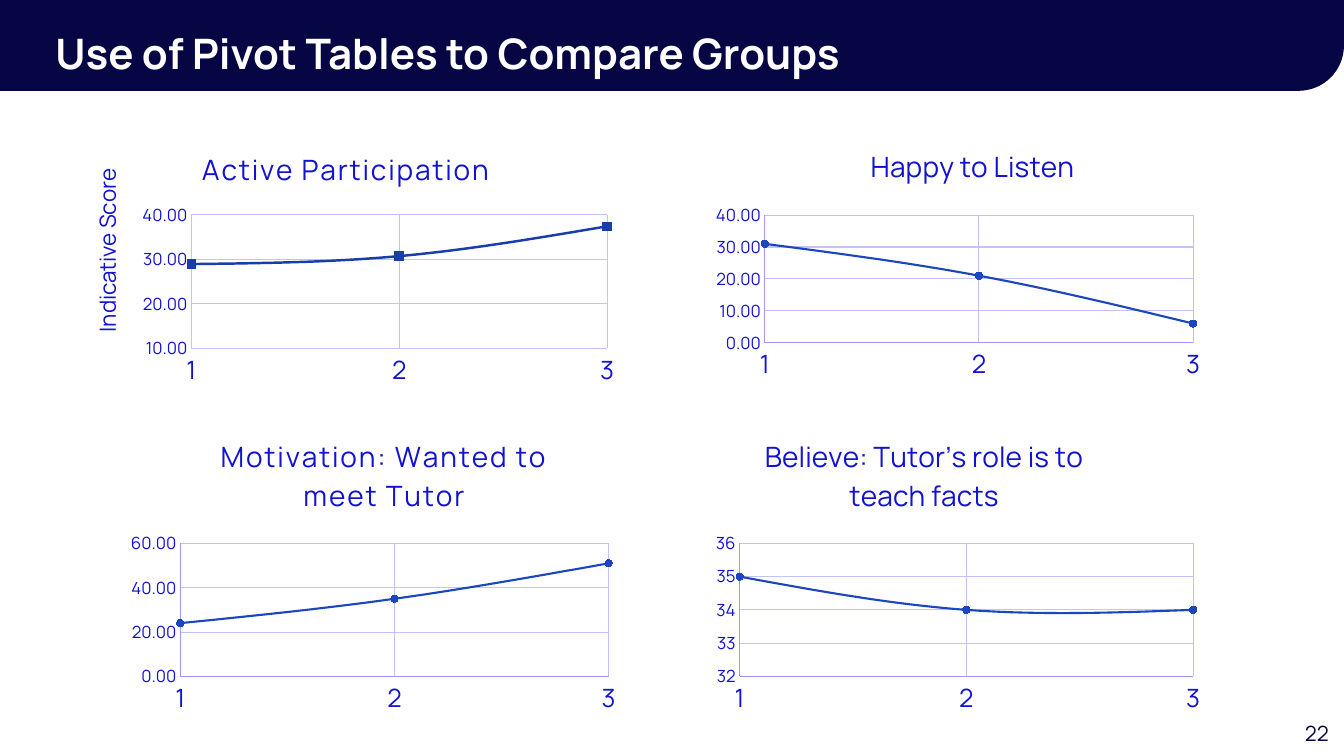
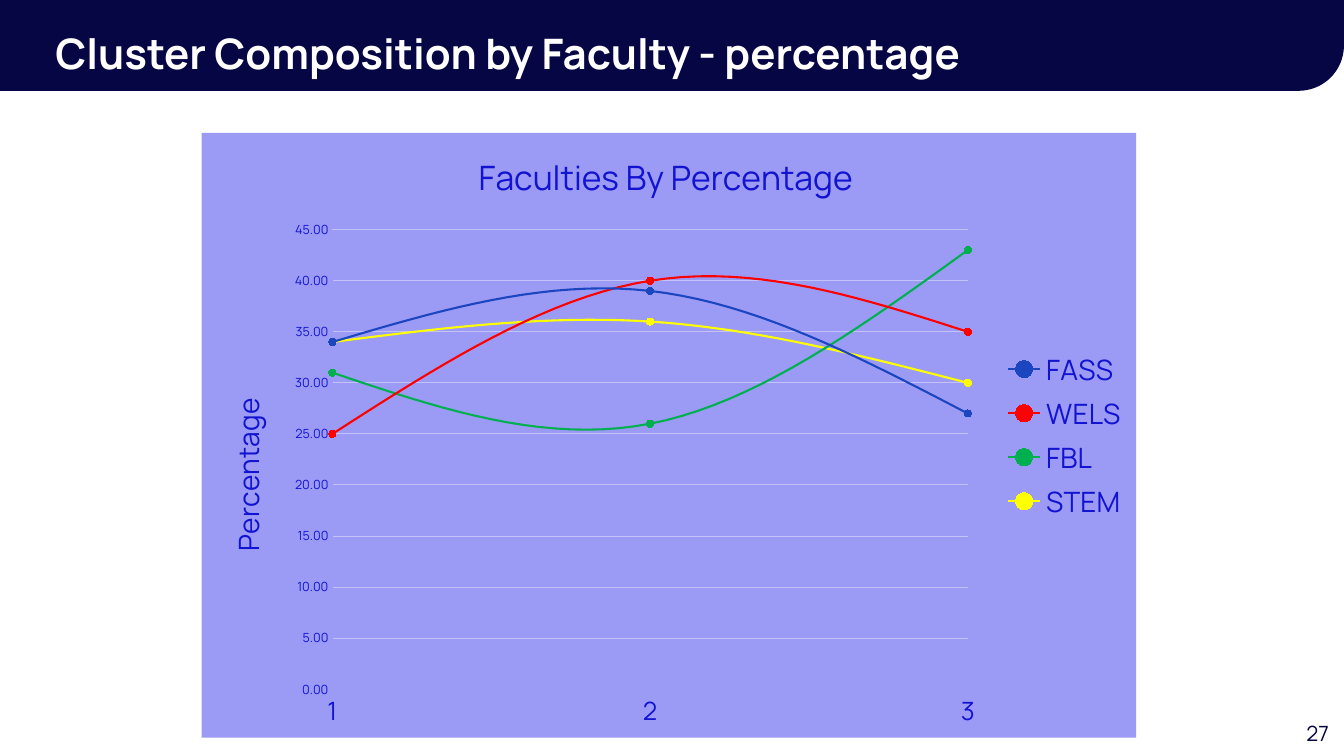
from dataclasses import dataclass

from lxml import etree
from pptx import Presentation
from pptx.chart.data import XyChartData
from pptx.dml.color import RGBColor
from pptx.enum.chart import (XL_CHART_TYPE, XL_LEGEND_POSITION,
                             XL_MARKER_STYLE, XL_TICK_MARK)
from pptx.enum.shapes import MSO_SHAPE
from pptx.enum.text import MSO_ANCHOR, MSO_AUTO_SIZE, PP_ALIGN
from pptx.oxml import parse_xml
from pptx.oxml.ns import nsdecls, qn
from pptx.util import Cm, Pt

SCATTER = XL_CHART_TYPE.XY_SCATTER_SMOOTH
CIRCLE, SQUARE = XL_MARKER_STYLE.CIRCLE, XL_MARKER_STYLE.SQUARE
NO_TICK = XL_TICK_MARK.NONE
LEGEND_RIGHT = XL_LEGEND_POSITION.RIGHT
ROUND_CORNER = MSO_SHAPE.ROUND_1_RECTANGLE
ANCHOR_TOP, NO_FIT = MSO_ANCHOR.TOP, MSO_AUTO_SIZE.NONE
LEFT, RIGHT = PP_ALIGN.LEFT, PP_ALIGN.RIGHT
TITLE_ONLY = 5


@dataclass(frozen=True)
class Theme:
    font: str = "Manrope"
    navy: str = "060645"
    white: str = "FFFFFF"
    ink: str = "1212D1"
    axis: str = "9B9BF6"
    grid: str = "C3C3FA"
    blue: str = "1C46C0"
    deep_blue: str = "193EAA"
    red: str = "FF0000"
    green: str = "00B050"
    yellow: str = "FFFF00"
    heading: int = 30
    chart_heading: int = 24
    panel_heading: int = 20
    axis_heading: int = 16
    x_labels: int = 18
    y_labels: int = 12
    chart_text: int = 10
    small_labels: int = 9
    number: int = 15


T = Theme()


@dataclass
class Panel:
    """One scatter chart; plot and title places are fractions of its box."""
    title: str
    box: tuple
    plot: tuple
    title_at: tuple
    scale: tuple                      # minimum, maximum, step
    series: list                      # (name, values, colour)
    number_format: str = "0.00"
    title_size: int = T.panel_heading
    spacing: int = 0
    label_size: int = T.y_labels
    axis_color: str = T.axis
    marker: tuple = (CIRCLE, 5)
    line_width: float = 1.5
    x_grid: bool = True
    y_title: tuple = ()               # text, size, place
    legend_box: tuple = ()
    fill: str = ""


def rgb(color):
    return RGBColor.from_string(color)


def style_font(font, size, color, bold=False):
    font.name, font.size, font.bold = T.font, Pt(size), bold
    font.color.rgb = rgb(color)


def style_line(line, color, width=0.75):
    line.color.rgb = rgb(color)
    line.width = Pt(width)


# --- Shared slide parts ---

def add_band(s, left, top, width, height):
    band = s.shapes.add_shape(ROUND_CORNER, Cm(left), Cm(top),
                              Cm(width), Cm(height))
    band.adjustments[0] = 0.5
    band.shadow.inherit = False
    band.fill.solid()
    band.fill.fore_color.rgb = rgb(T.navy)
    band.line.fill.background()
    band._element.spPr.xfrm.set("flipV", "1")
    s.shapes._spTree.insert(2, band._element)


def set_title(s, text, left, top, width, height):
    title = s.shapes.title
    title.left, title.top = Cm(left), Cm(top)
    title.width, title.height = Cm(width), Cm(height)
    tf = title.text_frame
    tf.text = text
    tf.auto_size = NO_FIT
    tf.vertical_anchor = ANCHOR_TOP
    p = tf.paragraphs[0]
    p.alignment, p.line_spacing, p.space_before = LEFT, 1.1, Pt(10)
    style_font(p.runs[0].font, T.heading, T.white, bold=True)


def add_number(s, number, left, top, width, height):
    tf = s.shapes.add_textbox(Cm(left), Cm(top), Cm(width), Cm(height)).text_frame
    tf.word_wrap = True
    tf.text = str(number)
    p = tf.paragraphs[0]
    p.alignment = RIGHT
    style_font(p.runs[0].font, T.number, T.navy)


def add_slide(prs, title, number):
    s = prs.slides.add_slide(prs.slide_layouts[TITLE_ONLY])
    add_band(s, -0.03, 0, 33.9, 2.29)
    set_title(s, title, 1.14, 0.43, 29.9, 1.37)
    add_number(s, number, 31.99, 18.03, 1.75, 0.89)
    return s


# --- Chart parts ---

def place(element, box, after=None):
    """Give a chart part a fixed place, in fractions of the chart."""
    for old in element.findall(qn("c:layout")):
        element.remove(old)
    layout = parse_xml(f"<c:layout {nsdecls('c')}/>")
    manual = etree.SubElement(layout, qn("c:manualLayout"))
    values = [("xMode", "edge"), ("yMode", "edge"), *zip("xywh", box)]
    if after is None:
        values.insert(0, ("layoutTarget", "inner"))
        element.insert(0, layout)
    else:
        element.find(qn(after)).addnext(layout)
    for tag, value in values:
        etree.SubElement(manual, qn(f"c:{tag}")).set("val", str(value))


def set_chart_text(holder, text, size, at, spacing=0):
    """Fill a chart title or an axis title."""
    tf = holder.text_frame
    tf.text = text
    r = tf.paragraphs[0].runs[0]
    style_font(r.font, size, T.ink)
    if spacing:
        r.font._element.set("spc", str(spacing))
    place(holder._element, at, "c:tx")
    return tf


def style_axis(axis, scale, size, color, number_format, grid):
    axis.minimum_scale, axis.maximum_scale, axis.major_unit = scale
    axis.major_tick_mark = axis.minor_tick_mark = NO_TICK
    axis.tick_labels.number_format = number_format
    axis.tick_labels.number_format_is_linked = False
    style_font(axis.tick_labels.font, size, T.ink)
    style_line(axis.format.line, color)
    axis.has_major_gridlines = grid
    if grid:
        style_line(axis.major_gridlines.format.line, T.grid)


def style_series(series, color, marker, width):
    series._element.get_or_add_smooth().val = True
    style_line(series.format.line, color, width)
    series.marker.style, series.marker.size = marker
    series.marker.format.fill.solid()
    series.marker.format.fill.fore_color.rgb = rgb(color)
    style_line(series.marker.format.line, color)


def fill_chart(chart, color):
    chart._chartSpace.chart.addnext(parse_xml(
        f"<c:spPr {nsdecls('c', 'a')}><a:solidFill><a:srgbClr val=\"{color}\"/>"
        "</a:solidFill><a:ln><a:noFill/></a:ln></c:spPr>"))


def add_panel(s, panel):
    data = XyChartData()
    for name, values, _ in panel.series:
        points = data.add_series(name)
        for x, y in enumerate(values, 1):
            points.add_data_point(x, y)
    box = [Cm(v) for v in panel.box]
    chart = s.shapes.add_chart(SCATTER, *box, data).chart
    style_font(chart.font, T.chart_text, T.navy)

    # Title and plot area
    chart.has_title = True
    set_chart_text(chart.chart_title, panel.title, panel.title_size,
                   panel.title_at, panel.spacing)
    place(chart._chartSpace.chart.plotArea, panel.plot)
    if panel.fill:
        fill_chart(chart, panel.fill)

    # Axes
    style_axis(chart.category_axis, (1, 3, 1), T.x_labels, panel.axis_color,
               "General", panel.x_grid)
    style_axis(chart.value_axis, panel.scale, panel.label_size,
               panel.axis_color, panel.number_format, True)
    if panel.y_title:
        tf = set_chart_text(chart.value_axis.axis_title, *panel.y_title)
        tf._txBody.bodyPr.set("rot", "-5400000")
        tf._txBody.bodyPr.set("vert", "horz")

    # Series and legend
    chart.plots[0].vary_by_categories = False
    for series, (_, _, color) in zip(chart.plots[0].series, panel.series):
        style_series(series, color, panel.marker, panel.line_width)
    chart.has_legend = bool(panel.legend_box)
    if chart.has_legend:
        legend = chart.legend
        legend.position = LEGEND_RIGHT
        legend.include_in_layout = False
        style_font(legend.font, T.panel_heading, T.ink)
        place(legend._element, panel.legend_box, "c:legendPos")


# --- Slides ---

def build_groups(prs):
    s = add_slide(prs, "Use of Pivot Tables to Compare Groups", 22)
    left, right, top, bottom = 3.02, 17.75, 3.3, 10.57
    panels = [
        Panel("Happy to Listen", (right, top, 12.7, 6.43),
              (0.12, 0.33, 0.85, 0.5), (0.32, 0.03), (0, 40, 10),
              [("Happy to Listen", (31, 21, 6), T.blue)]),
        Panel("Motivation: Wanted to meet Tutor", (left, bottom, 12.7, 7.62),
              (0.12, 0.41, 0.85, 0.44), (0.19, 0.03), (0, 60, 20),
              [("Series 1", (24, 35, 51), T.blue)], spacing=120),
        Panel("Believe: Tutor's role is to teach facts",
              (right, bottom, 12.7, 7.62),
              (0.07, 0.41, 0.9, 0.44), (0.11, 0.03), (32, 36, 1),
              [("Series 1", (35, 34, 34), T.blue)],
              number_format="General"),
        Panel("Active Participation", (1.75, top, 13.97, 6.6),
              (0.22, 0.32, 0.75, 0.51), (0.23, 0.04), (10, 40, 10),
              [("Series 1", (28.9, 30.7, 37.4), T.deep_blue)], spacing=120,
              axis_color=T.grid, marker=(SQUARE, 6), line_width=1.75,
              y_title=("Indicative Score", T.axis_heading, (0.03, 0.13))),
    ]
    for panel in panels:
        add_panel(s, panel)


def build_faculties(prs):
    s = add_slide(prs, "Cluster Composition by Faculty - percentage", 27)
    add_panel(s, Panel(
        "Faculties By Percentage", (5.08, 3.35, 23.55, 15.24),
        (0.14, 0.16, 0.68, 0.76), (0.29, 0.02), (0, 45, 5),
        [("FASS", (34, 39, 27), T.blue),
         ("WELS", (25, 40, 35), T.red),
         ("FBL", (31, 26, 43), T.green),
         ("STEM", (34, 36, 30), T.yellow)],
        title_size=T.chart_heading, label_size=T.small_labels, x_grid=False,
        y_title=("Percentage", T.panel_heading, (0.02, 0.43)),
        legend_box=(0.86, 0.35, 0.13, 0.3), fill=T.axis))


def main():
    prs = Presentation()
    prs.slide_width, prs.slide_height = Cm(33.87), Cm(19.05)
    build_groups(prs)
    build_faculties(prs)
    prs.save("out.pptx")


if __name__ == "__main__":
    main()
